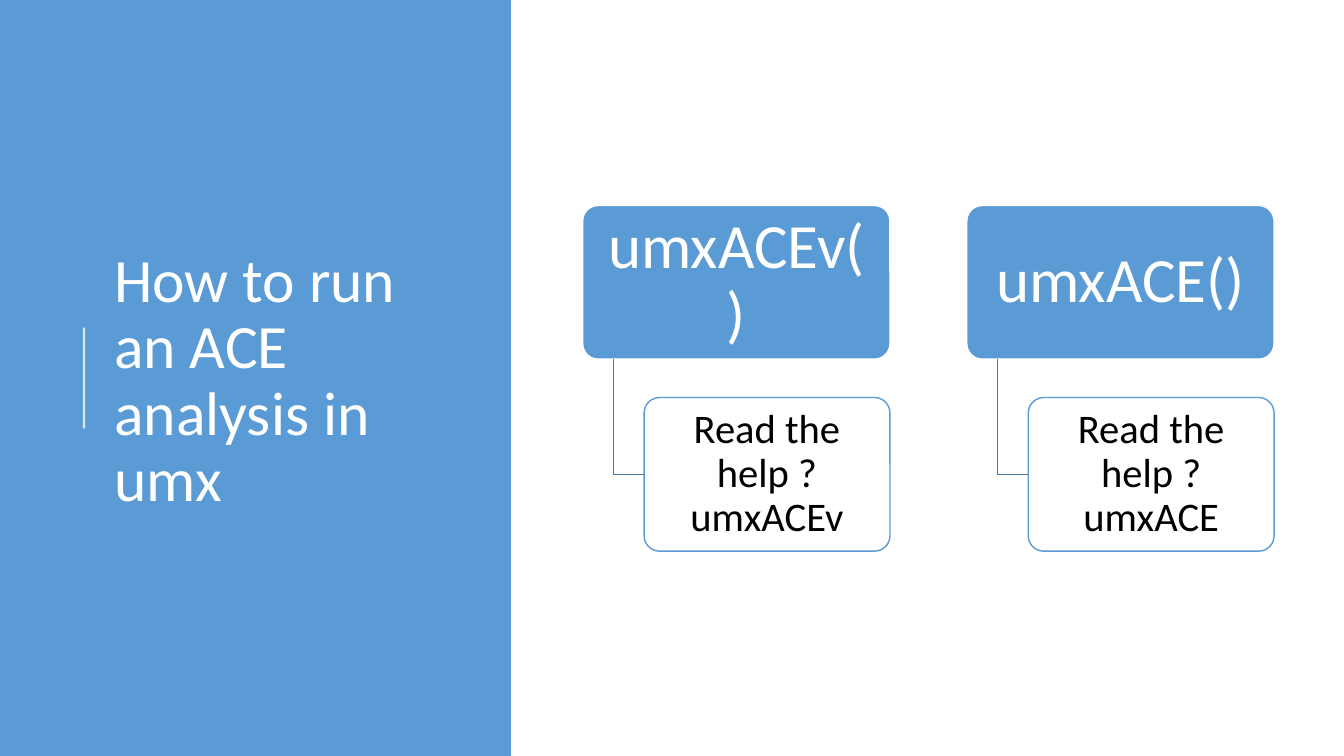
from lxml.etree import SubElement
from pptx import Presentation
from pptx.dml.color import RGBColor
from pptx.enum.shapes import MSO_CONNECTOR, MSO_SHAPE
from pptx.enum.text import MSO_ANCHOR, PP_ALIGN
from pptx.oxml.ns import qn
from pptx.util import Pt

COLORS = {"blue": "5B9BD5", "elbow": "497CAB", "white": "FFFFFF", "black": "000000"}


def paint(fill, color, opacity=100):
    """Make a fill solid, with opacity in percent."""
    fill.solid()
    fill.fore_color.rgb = RGBColor.from_string(COLORS[color])
    if opacity < 100:
        color_node = fill._xPr.find(qn("a:solidFill"))[0]
        SubElement(color_node, qn("a:alpha"), val=str(opacity * 1000))


def write(shape, text, size, color, align, inset_x, inset_y):
    """Put one vertically centred, wrapped paragraph into a shape."""
    frame = shape.text_frame
    frame.text = text
    frame.word_wrap = True
    frame.vertical_anchor = MSO_ANCHOR.MIDDLE
    frame.margin_left = frame.margin_right = Pt(inset_x)
    frame.margin_top = frame.margin_bottom = Pt(inset_y)
    paragraph = frame.paragraphs[0]
    paragraph.alignment = align
    paragraph.line_spacing = 0.9
    font = paragraph.runs[0].font
    font.name = "Calibri"
    font.size = Pt(size)
    font.color.rgb = RGBColor.from_string(COLORS[color])


prs = Presentation()
prs.slide_width, prs.slide_height = Pt(960), Pt(540)
slide = prs.slides.add_slide(prs.slide_layouts[6])
shapes = slide.shapes

# Title panel
panel = shapes.add_shape(MSO_SHAPE.RECTANGLE, 0, 0, Pt(365), Pt(540))
panel.shadow.inherit = False
paint(panel.fill, "blue")
panel.line.fill.background()

accent = shapes.add_connector(MSO_CONNECTOR.STRAIGHT, Pt(60), Pt(306), Pt(60), Pt(234))
accent.line.width = Pt(1.5)
paint(accent.line.fill, "white", 80)
SubElement(accent._element.spPr, qn("a:effectLst"))

title = shapes.add_textbox(Pt(74.5), Pt(56), Pt(265.5), Pt(433.5))
write(title, "How to run an ACE analysis in umx", 44, "white", PP_ALIGN.LEFT, 7.2, 3.6)

# Two functions, each with its help box hanging below
first_left, head_top = 416.2, 146.8
head_width, box_height = 219.5, 109.75
indent = head_width / 5
leaf_top = head_top + box_height * 1.25

for column, function in enumerate(["umxACEv", "umxACE"]):
    left = first_left + column * head_width * 1.25
    boxes = [
        (left, head_top, head_width, "blue", 100, "white",
         f"{function}()", 45, "white", 9.5, 7.5),
        (left + indent, leaf_top, head_width - indent, "white", 90, "blue",
         f"Read the help ?{function}", 29, "black", 7.5, 6),
    ]
    for x, y, width, fill, opacity, border, text, size, ink, inset_x, inset_y in boxes:
        box = shapes.add_shape(MSO_SHAPE.ROUNDED_RECTANGLE,
                               Pt(x), Pt(y), Pt(width), Pt(box_height))
        box.adjustments[0] = 0.1
        box.shadow.inherit = False
        paint(box.fill, fill, opacity)
        paint(box.line.fill, border)
        box.line.width = Pt(1)
        write(box, text, size, ink, PP_ALIGN.CENTER, inset_x, inset_y)

    stem_x, leaf_middle = left + indent / 2, leaf_top + box_height / 2
    outline = shapes.build_freeform(Pt(stem_x), Pt(head_top + box_height))
    outline.add_line_segments([(Pt(stem_x), Pt(leaf_middle)),
                               (Pt(left + indent), Pt(leaf_middle))], close=False)
    elbow = outline.convert_to_shape()
    elbow.shadow.inherit = False
    elbow.fill.background()
    paint(elbow.line.fill, "elbow")
    elbow.line.width = Pt(1)

prs.save("out.pptx")
